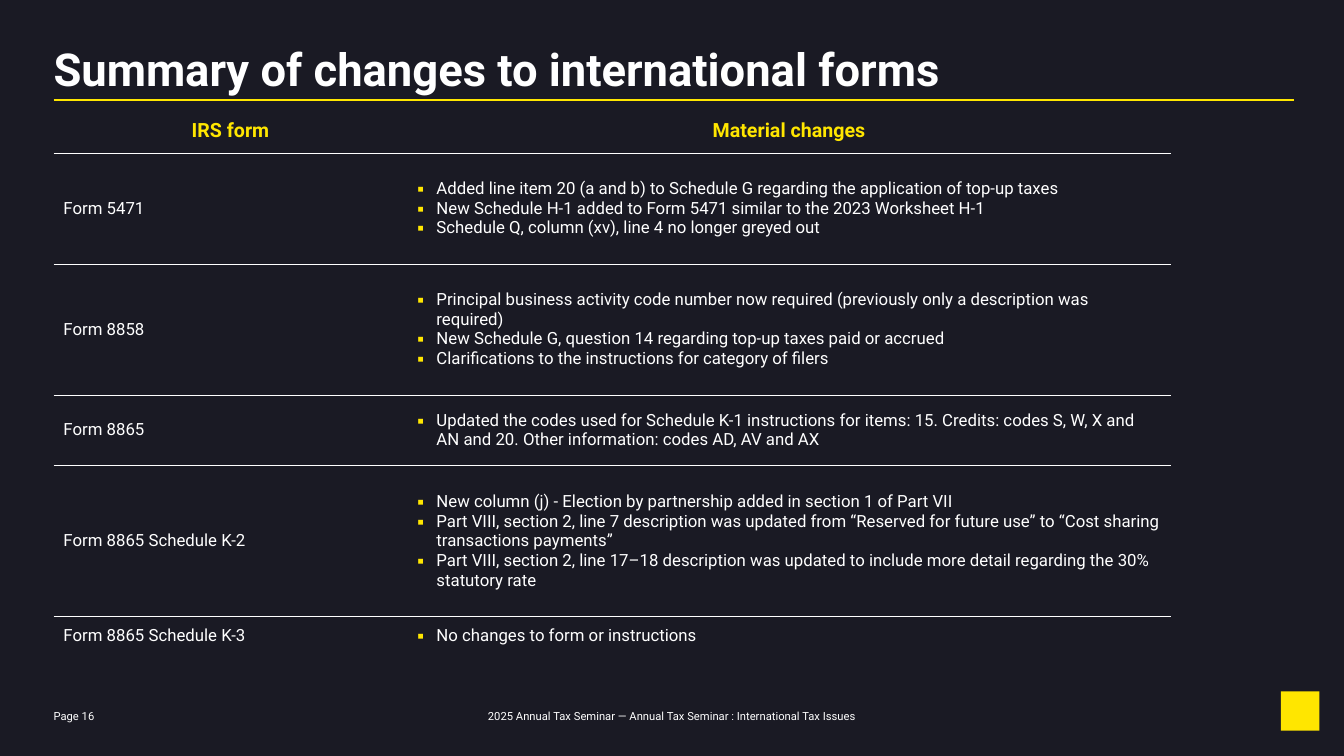
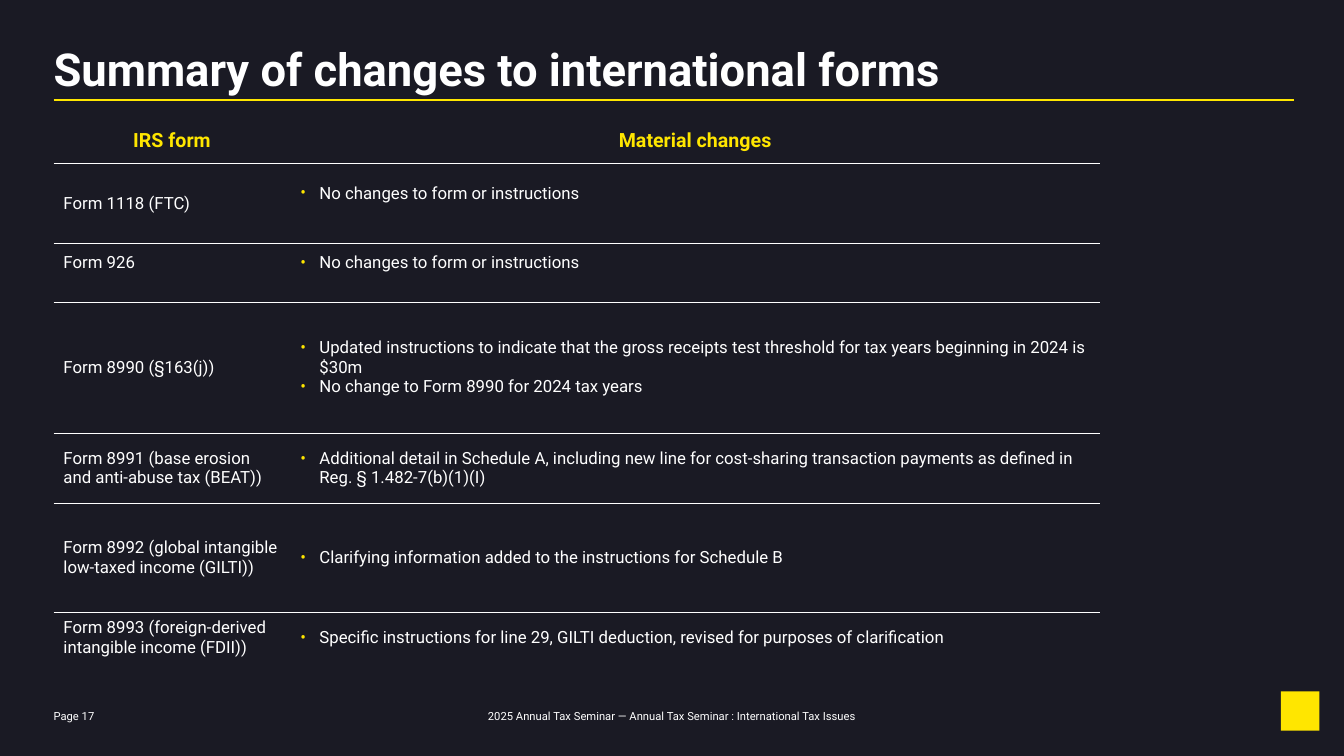
from lxml.etree import SubElement
from pptx import Presentation
from pptx.dml.color import RGBColor
from pptx.enum.shapes import MSO_CONNECTOR, MSO_SHAPE
from pptx.enum.text import MSO_ANCHOR, PP_ALIGN
from pptx.oxml.ns import qn
from pptx.util import Cm, Pt

DARK, YELLOW, WHITE = "1A1A24", "FFE600", "FFFFFF"
FONT = "Roboto"
TITLE = {"size": Pt(32.4), "bold": True}
FOOTER = {"size": Pt(8), "bold": False}
HEADING = {"size": Pt(14), "bold": True}
BODY = {"size": Pt(12), "bold": False}
BOX = {"margin_left": 0, "margin_top": 0, "margin_right": 0, "margin_bottom": 0, "word_wrap": True}
CELL = {
    "margin_left": Cm(0.25), "margin_top": Cm(0.13), "margin_right": Cm(0.25),
    "margin_bottom": Cm(0.13), "vertical_anchor": MSO_ANCHOR.MIDDLE,
}
LEFT = Cm(1.35)
FOOTER_TOP = Cm(17.88)
RAISED = Cm(0.64)

PAGES = [
    {
        "number": 16, "top": 2.72, "columns": [8.92, 19.23], "bullet": "▪", "raised": [],
        "heights": [1.14, 2.79, 3.3, 1.78, 3.81, 0.94],
        "forms": [
            ("Form 5471", [
                "Added line item 20 (a and b) to Schedule G regarding the application of top-up taxes",
                "New Schedule H-1 added to Form 5471 similar to the 2023 Worksheet H-1",
                "Schedule Q, column (xv), line 4 no longer greyed out",
            ]),
            ("Form 8858", [
                "Principal business activity code number now required (previously only a description was required)",
                "New Schedule G, question 14 regarding top-up taxes paid or accrued",
                "Clarifications to the instructions for category of filers",
            ]),
            ("Form 8865", [
                "Updated the codes used for Schedule K-1 instructions for items: 15. Credits: codes S, W, X and "
                "AN and 20. Other information: codes AD, AV and AX",
            ]),
            ("Form 8865 Schedule K-2", [
                "New column (j) - Election by partnership added in section 1 of Part VII",
                "Part VIII, section 2, line 7 description was updated from “Reserved for future use” to “Cost sharing "
                "transactions payments”",
                "Part VIII, section 2, line 17–18 description was updated to include more detail regarding the 30% "
                "statutory rate",
            ]),
            ("Form 8865 Schedule K-3", ["No changes to form or instructions"]),
        ],
    },
    {
        "number": 17, "top": 2.97, "columns": [5.97, 20.4], "bullet": "•",
        "raised": [(1, 1), (2, 0), (2, 1)],
        "heights": [1.14, 2.03, 1.47, 3.3, 1.78, 2.74, 0.94],
        "forms": [
            ("Form 1118 (FTC)", ["No changes to form or instructions"]),
            ("Form 926", ["No changes to form or instructions"]),
            ("Form 8990 (§163(j))", [
                "Updated instructions to indicate that the gross receipts test threshold for tax years beginning "
                "in 2024 is $30m",
                "No change to Form 8990 for 2024 tax years",
            ]),
            ("Form 8991 (base erosion and anti-abuse tax (BEAT))", [
                "Additional detail in Schedule A, including new line for cost-sharing transaction payments as "
                "defined in Reg. § 1.482-7(b)(1)(I)",
            ]),
            ("Form 8992 (global intangible low-taxed income (GILTI))", [
                "Clarifying information added to the instructions for Schedule B",
            ]),
            ("Form 8993 (foreign-derived intangible income (FDII))", [
                "Specific instructions for line 29, GILTI deduction, revised for purposes of clarification",
            ]),
        ],
    },
]


def write(frame, lines, style, color=WHITE, alignment=PP_ALIGN.LEFT, bullet=None):
    for index, line in enumerate(lines):
        paragraph = frame.add_paragraph() if index else frame.paragraphs[0]
        paragraph.alignment = alignment
        run = paragraph.add_run()
        run.text = line
        for name, value in {"name": FONT, **style}.items():
            setattr(run.font, name, value)
        run.font.color.rgb = RGBColor.from_string(color)
        if bullet:
            properties = paragraph._p.get_or_add_pPr()
            properties.set("marL", str(Cm(0.48)))
            properties.set("indent", str(-Cm(0.48)))
            SubElement(SubElement(properties, qn("a:buClr")), qn("a:srgbClr"), val=YELLOW)
            SubElement(properties, qn("a:buFont"), typeface=FONT)
            SubElement(properties, qn("a:buChar"), char=bullet)


def set_border(cell, side, visible):
    border = SubElement(cell._tc.get_or_add_tcPr(), qn(f"a:ln{side}"), w=str(Pt(0.5)))
    if visible:
        SubElement(SubElement(border, qn("a:solidFill")), qn("a:srgbClr"), val=WHITE)
    else:
        SubElement(border, qn("a:noFill"))


presentation = Presentation()
presentation.slide_width = Cm(33.87)
presentation.slide_height = Cm(19.05)
background = presentation.slide_master.background.fill
background.solid()
background.fore_color.rgb = RGBColor.from_string(DARK)

for page in PAGES:
    slide = presentation.slides.add_slide(presentation.slide_layouts[6])

    rule = slide.shapes.add_connector(MSO_CONNECTOR.STRAIGHT, LEFT, Cm(2.51), Cm(32.61), Cm(2.51))
    rule.line.color.rgb = RGBColor.from_string(YELLOW)
    rule.line.width = Pt(1.5)
    SubElement(rule._element.spPr, qn("a:effectLst"))

    emblem = slide.shapes.add_shape(MSO_SHAPE.RECTANGLE, Cm(32.28), Cm(17.42), Cm(0.97), Cm(0.99))
    emblem.shadow.inherit = False
    emblem.fill.solid()
    emblem.fill.fore_color.rgb = RGBColor.from_string(YELLOW)
    emblem.line.fill.background()

    texts = [
        ("Summary of changes to international forms", LEFT, Cm(1.04), Cm(31.19), Cm(1.3), TITLE, PP_ALIGN.LEFT),
        (f"Page {page['number']}", LEFT, FOOTER_TOP, Cm(1.42), Cm(0.34), FOOTER, PP_ALIGN.LEFT),
        ("2025 Annual Tax Seminar — Annual Tax Seminar : International Tax Issues",
         Cm(12.24), FOOTER_TOP, Cm(9.4), Cm(0.36), FOOTER, PP_ALIGN.CENTER),
    ]
    for text, left, top, width, height, style, alignment in texts:
        frame = slide.shapes.add_textbox(left, top, width, height).text_frame
        for name, value in BOX.items():
            setattr(frame, name, value)
        write(frame, [text], style, alignment=alignment)

    heights, columns = page["heights"], page["columns"]
    table = slide.shapes.add_table(
        len(heights), len(columns), LEFT, Cm(page["top"]), Cm(sum(columns)), Cm(sum(heights))
    ).table
    table.horz_banding = False
    for column, width in zip(table.columns, columns):
        column.width = Cm(width)
    for row, height in zip(table.rows, heights):
        row.height = Cm(height)

    last = len(heights) - 1
    rows = [("IRS form", ["Material changes"])] + page["forms"]
    for row_index, (form, changes) in enumerate(rows):
        for column_index, lines in enumerate([[form], changes]):
            cell = table.cell(row_index, column_index)
            for name, value in CELL.items():
                setattr(cell, name, value)
            if (row_index, column_index) in page["raised"]:
                cell.margin_bottom = RAISED
            borders = {"L": False, "R": False, "T": row_index > 0, "B": row_index < last}
            for side, visible in borders.items():
                set_border(cell, side, visible)
            cell.fill.solid()
            cell.fill.fore_color.rgb = RGBColor.from_string(DARK)
            if row_index == 0:
                write(cell.text_frame, lines, HEADING, YELLOW, PP_ALIGN.CENTER)
            else:
                write(cell.text_frame, lines, BODY, bullet=page["bullet"] if column_index else None)

presentation.save("out.pptx")
